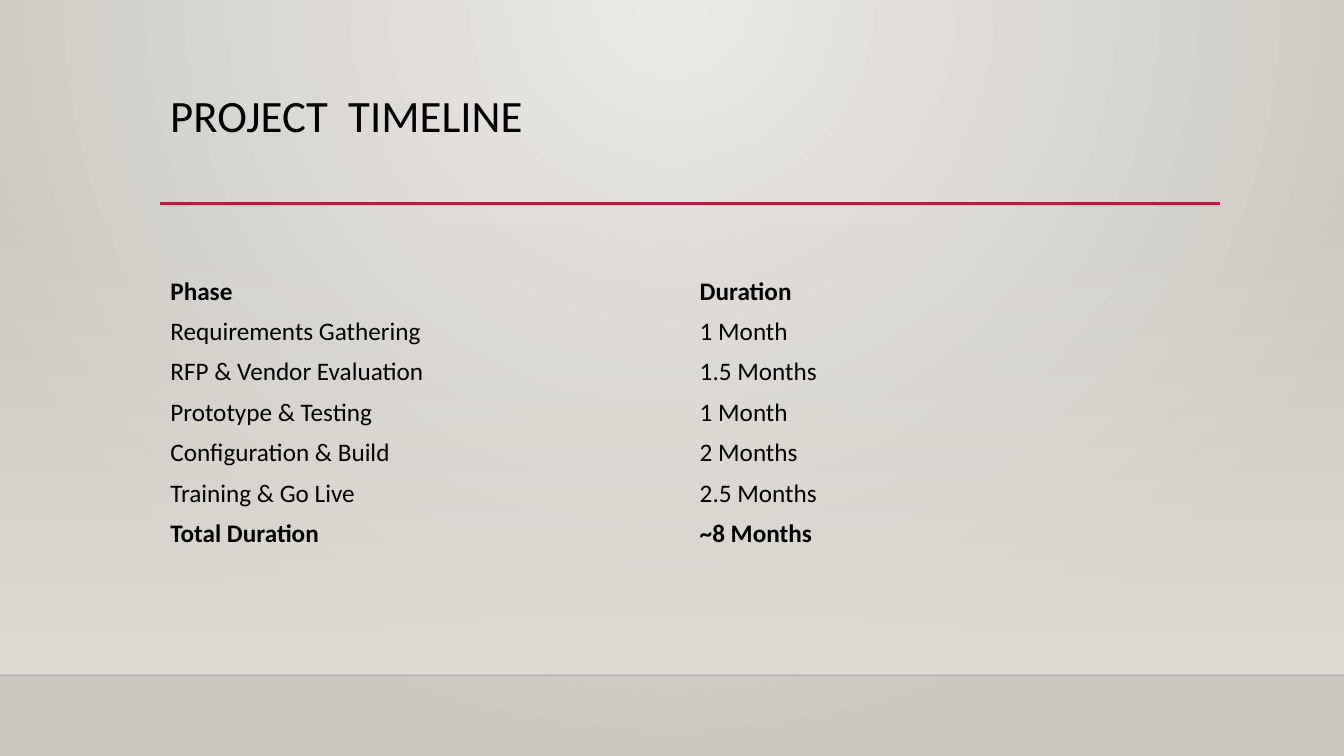
from dataclasses import dataclass

from lxml.etree import SubElement
from pptx import Presentation
from pptx.dml.color import RGBColor
from pptx.dml.fill import FillFormat
from pptx.enum.shapes import MSO_CONNECTOR, MSO_SHAPE
from pptx.enum.text import MSO_ANCHOR
from pptx.oxml.ns import qn
from pptx.slide import Slide
from pptx.util import Inches, Pt

COLORS = {
    "glow": "ECEAE7",
    "edge": "CAC7C1",
    "wall": "DFDBD5",
    "floor_line": "000001",
    "accent": "B71E42",
    "text": "000000",
}
FONT = "Calibri"
NO_GRID_STYLE = "{2D5ABB26-0587-4C30-8999-92F81FD0307C}"
SLIDE_WIDTH, SLIDE_HEIGHT = 13.33, 7.5
MARGIN = 1.59
FLOOR_TOP = 6.7
ROW_HEIGHT = 0.4
COLUMN_WIDTHS = (5.25, 5.19)


@dataclass
class Phase:
    label: str
    duration: str
    bold: bool = False


@dataclass
class Rule:
    left: float
    right: float
    top: float
    color: str
    width: float
    opacity: int = 100


PHASES = [
    Phase("Phase", "Duration", bold=True),
    Phase("Requirements Gathering", "1 Month"),
    Phase("RFP & Vendor Evaluation", "1.5 Months"),
    Phase("Prototype & Testing", "1 Month"),
    Phase("Configuration & Build", "2 Months"),
    Phase("Training & Go Live", "2.5 Months"),
    Phase("Total Duration", "~8 Months", bold=True),
]
RULES = [
    Rule(0, SLIDE_WIDTH, FLOOR_TOP, "floor_line", 1, opacity=20),
    Rule(MARGIN, 12.1, 2.02, "accent", 2.5),
]


def rgb(name: str) -> RGBColor:
    return RGBColor.from_string(COLORS[name])


def set_opacity(color_element, percent: int) -> None:
    SubElement(color_element, qn("a:alpha")).set("val", str(percent * 1000))


def set_gradient(fill: FillFormat, start: str, end: str) -> None:
    fill.gradient()
    for stop, name in zip(fill.gradient_stops, (start, end)):
        stop.color.rgb = rgb(name)


def style_text(paragraph, size: int, bold: bool = False) -> None:
    paragraph.font.name = FONT
    paragraph.font.size = Pt(size)
    paragraph.font.bold = bold
    paragraph.font.color.rgb = rgb("text")


def draw_background(slide: Slide) -> None:
    set_gradient(slide.background.fill, "glow", "edge")
    gradient = slide._element.xpath("./p:cSld/p:bg//a:gradFill")[0]
    gradient.remove(gradient.find(qn("a:lin")))
    circle = SubElement(gradient, qn("a:path"), {"path": "circle"})
    SubElement(circle, qn("a:fillToRect"),
               {"l": "43000", "t": "0", "r": "43000", "b": "100000"})


def draw_wall(slide: Slide) -> None:
    top = 2.21
    wall = slide.shapes.add_shape(
        MSO_SHAPE.RECTANGLE, 0, Inches(top),
        Inches(SLIDE_WIDTH), Inches(FLOOR_TOP - top))
    wall.shadow.inherit = False
    wall.line.fill.background()
    set_gradient(wall.fill, "wall", "wall")
    wall.fill.gradient_angle = 270
    set_opacity(wall._element.xpath(".//a:gs/a:srgbClr")[0], 0)


def draw_rule(slide: Slide, rule: Rule) -> None:
    line = slide.shapes.add_connector(
        MSO_CONNECTOR.STRAIGHT, Inches(rule.left), Inches(rule.top),
        Inches(rule.right), Inches(rule.top))
    line.line.color.rgb = rgb(rule.color)
    line.line.width = Pt(rule.width)
    if rule.opacity < 100:
        set_opacity(line._element.xpath(".//a:ln//a:srgbClr")[0], rule.opacity)
    SubElement(line._element.spPr, qn("a:effectLst"))


def draw_title(slide: Slide) -> None:
    title = slide.shapes.add_textbox(
        Inches(MARGIN), Inches(0.88), Inches(10.5), Inches(1.15)).text_frame
    title.word_wrap = True
    title.vertical_anchor = MSO_ANCHOR.TOP
    heading = title.paragraphs[0]
    heading.text = "PROJECT  TIMELINE"
    heading.line_spacing = 0.9
    style_text(heading, 32)


def draw_timeline(slide: Slide, phases: list[Phase]) -> None:
    timeline = slide.shapes.add_table(
        len(phases), len(COLUMN_WIDTHS), Inches(MARGIN), Inches(2.69),
        Inches(sum(COLUMN_WIDTHS)), Inches(ROW_HEIGHT * len(phases))).table
    timeline.first_row = False
    timeline.horz_banding = False
    timeline._tbl.tblPr.find(qn("a:tableStyleId")).text = NO_GRID_STYLE
    for column, width in zip(timeline.columns, COLUMN_WIDTHS):
        column.width = Inches(width)
    for row, phase in zip(timeline.rows, phases):
        row.height = Inches(ROW_HEIGHT)
        for cell, text in zip(row.cells, (phase.label, phase.duration)):
            cell.fill.background()
            cell.vertical_anchor = MSO_ANCHOR.MIDDLE
            cell.text = text
            style_text(cell.text_frame.paragraphs[0], 18, phase.bold)


def main() -> None:
    presentation = Presentation()
    presentation.slide_width = Inches(SLIDE_WIDTH)
    presentation.slide_height = Inches(SLIDE_HEIGHT)
    slide = presentation.slides.add_slide(presentation.slide_layouts[6])
    draw_background(slide)
    draw_wall(slide)
    for rule in RULES:
        draw_rule(slide, rule)
    draw_title(slide)
    draw_timeline(slide, PHASES)
    presentation.save("out.pptx")


if __name__ == "__main__":
    main()
